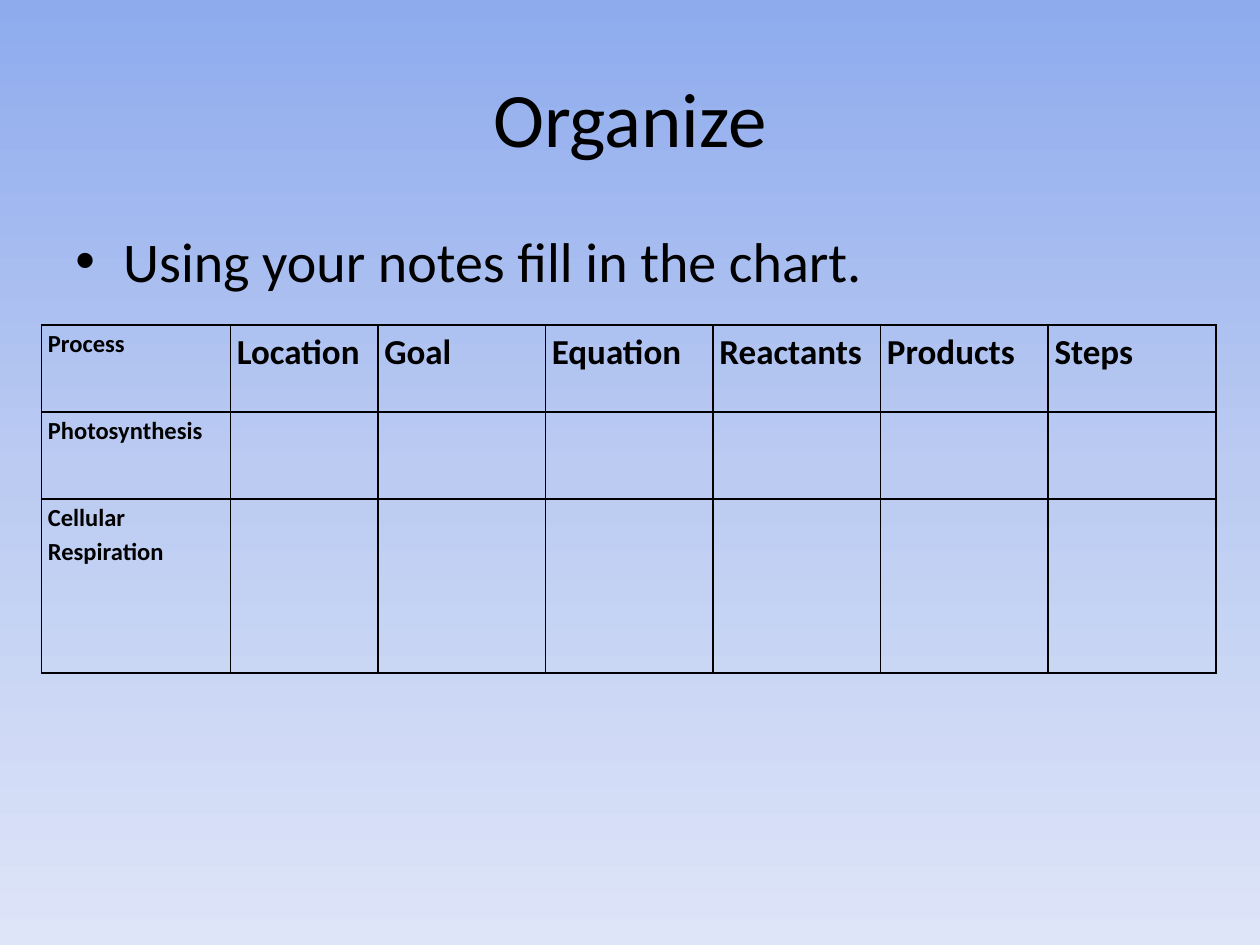
from copy import deepcopy
from dataclasses import dataclass

from pptx import Presentation
from pptx.dml.color import RGBColor
from pptx.enum.text import MSO_ANCHOR as Anchor, PP_ALIGN as Align
from pptx.oxml import parse_xml
from pptx.oxml.ns import nsdecls, qn
from pptx.util import Inches, Pt

BLACK = RGBColor(0x00, 0x00, 0x00)
SKY_TOP = RGBColor(0x8E, 0xAB, 0xEE)
SKY_MIDDLE = RGBColor(0xBB, 0xCB, 0xF2)
SKY_BOTTOM = RGBColor(0xDE, 0xE5, 0xF8)
FONT = "Calibri"

TOPICS = ["Process", "Location", "Goal", "Equation", "Reactants", "Products", "Steps"]
PROCESSES = ["Photosynthesis", "Cellular Respiration"]
COLUMN_WIDTHS = [1.5, 1.17] + [1.33] * 5
ROW_HEIGHTS = [0.69, 0.69, 1.38]


@dataclass
class Line:
    text: str
    top: float
    height: float
    size: int
    align: Align
    anchor: Anchor


HEADING = Line("Organize", 0.3, 1.25, 44, Align.CENTER, Anchor.MIDDLE)
TASK = Line("Using your notes fill in the chart.", 1.75, 4.95, 32, Align.LEFT, Anchor.TOP)


def style(paragraph, size: int, bold: bool = False) -> None:
    for run in paragraph.runs:
        run.font.name = FONT
        run.font.size = Pt(size)
        run.font.bold = bold
        run.font.color.rgb = BLACK


def paint_background(slide) -> None:
    fill = slide.background.fill
    fill.gradient()
    fill.gradient_angle = 270
    stop_list = slide.element.find(".//" + qn("a:gsLst"))
    stop_list.insert(1, deepcopy(stop_list[0]))
    for stop, color, position in zip(
        fill.gradient_stops, (SKY_TOP, SKY_MIDDLE, SKY_BOTTOM), (0, 0.5, 1)
    ):
        stop.color.rgb = color
        stop.position = position


def add_line(slide, line: Line):
    frame = slide.shapes.add_textbox(
        Inches(0.5), Inches(line.top), Inches(9), Inches(line.height)
    ).text_frame
    frame.word_wrap = True
    frame.vertical_anchor = line.anchor
    paragraph = frame.paragraphs[0]
    paragraph.text = line.text
    paragraph.alignment = line.align
    style(paragraph, line.size)
    return paragraph


def add_bullet(paragraph) -> None:
    paragraph.space_before = Pt(6.4)
    properties = paragraph._p.get_or_add_pPr()
    properties.set("marL", str(Inches(0.38)))
    properties.set("indent", str(-Inches(0.38)))
    properties.append(parse_xml(f'<a:buFont {nsdecls("a")} typeface="Arial"/>'))
    properties.append(parse_xml(f'<a:buChar {nsdecls("a")} char="•"/>'))


def format_cell(cell, text: str, size: int) -> None:
    cell.margin_left = cell.margin_right = Inches(0.05)
    cell.margin_top = cell.margin_bottom = 0
    properties = cell._tc.get_or_add_tcPr()
    for side in ("lnL", "lnR", "lnT", "lnB"):
        properties.append(parse_xml(
            f'<a:{side} {nsdecls("a")} w="{Pt(1)}"><a:solidFill>'
            f'<a:srgbClr val="{BLACK}"/></a:solidFill></a:{side}>'
        ))
    cell.fill.background()
    if text:
        cell.text_frame.text = text
        paragraph = cell.text_frame.paragraphs[0]
        paragraph.line_spacing = 1.15
        style(paragraph, size, bold=True)


def add_notes_table(slide) -> None:
    table = slide.shapes.add_table(
        len(ROW_HEIGHTS), len(COLUMN_WIDTHS), Inches(0.33), Inches(2.58),
        Inches(sum(COLUMN_WIDTHS)), Inches(sum(ROW_HEIGHTS)),
    ).table
    table.first_row = table.horz_banding = False
    for column, width in zip(table.columns, COLUMN_WIDTHS):
        column.width = Inches(width)
    for row, height in zip(table.rows, ROW_HEIGHTS):
        row.height = Inches(height)
    blanks = [""] * (len(TOPICS) - 1)
    contents = [TOPICS] + [[process] + blanks for process in PROCESSES]
    for row, texts in zip(table.rows, contents):
        for index, (cell, text) in enumerate(zip(row.cells, texts)):
            format_cell(cell, text, 20 if index else 14)


def main() -> None:
    """Build the slide with the chart for comparing two cell processes."""
    presentation = Presentation()
    presentation.slide_width = Inches(10)
    presentation.slide_height = Inches(7.5)
    slide = presentation.slides.add_slide(presentation.slide_layouts[6])
    paint_background(slide)
    add_line(slide, HEADING)
    add_bullet(add_line(slide, TASK))
    add_notes_table(slide)
    presentation.save("out.pptx")


if __name__ == "__main__":
    main()
